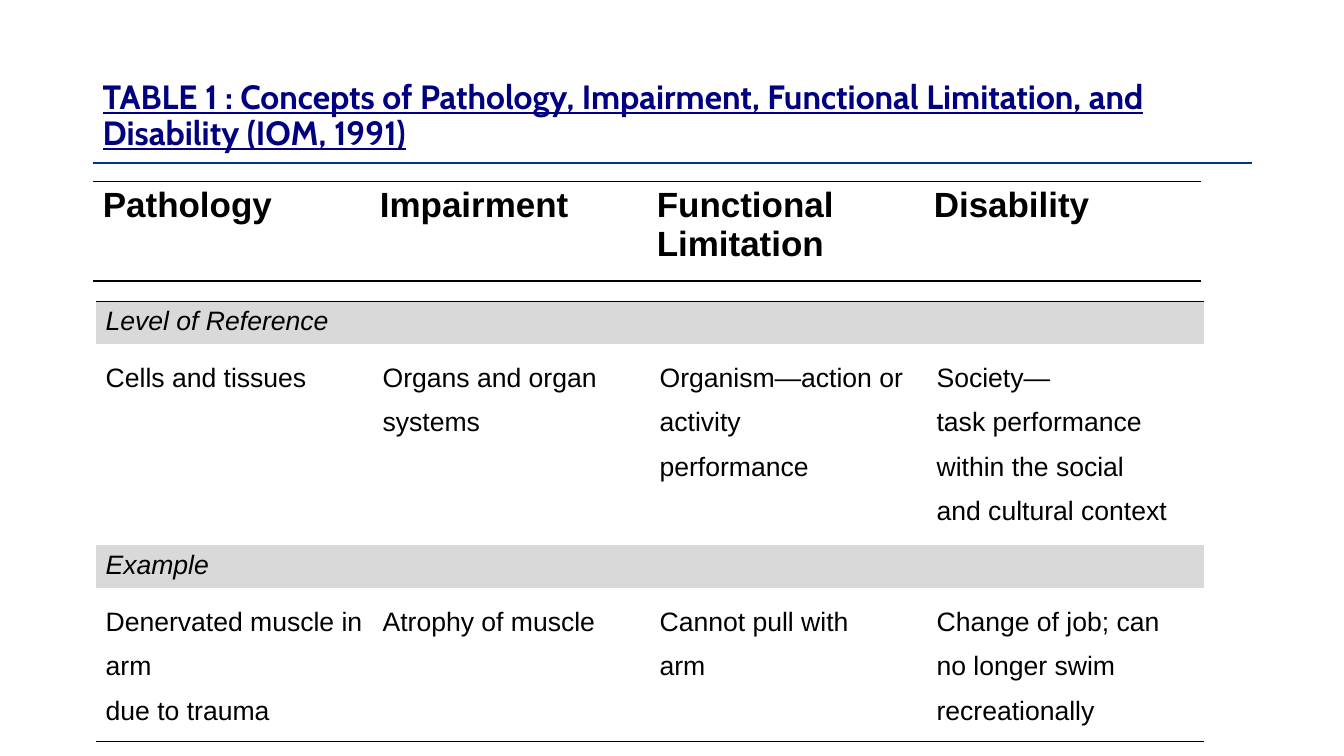
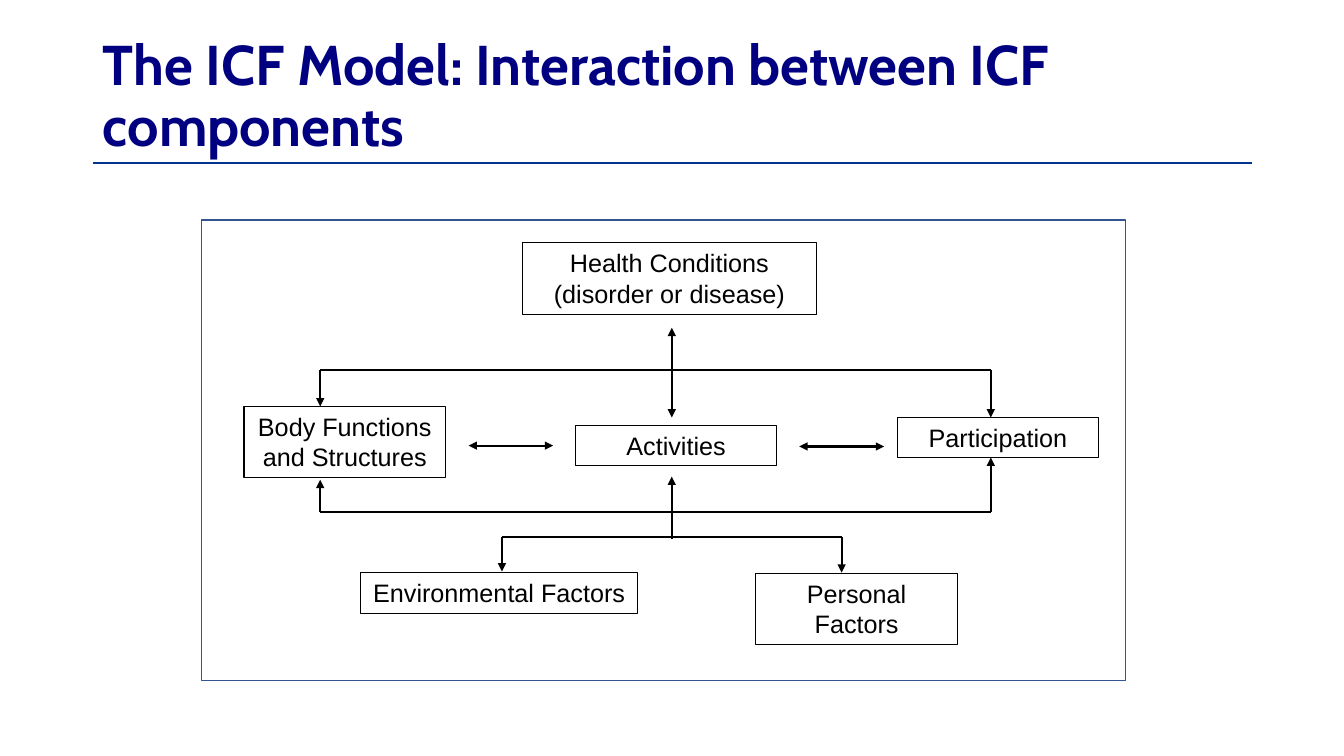
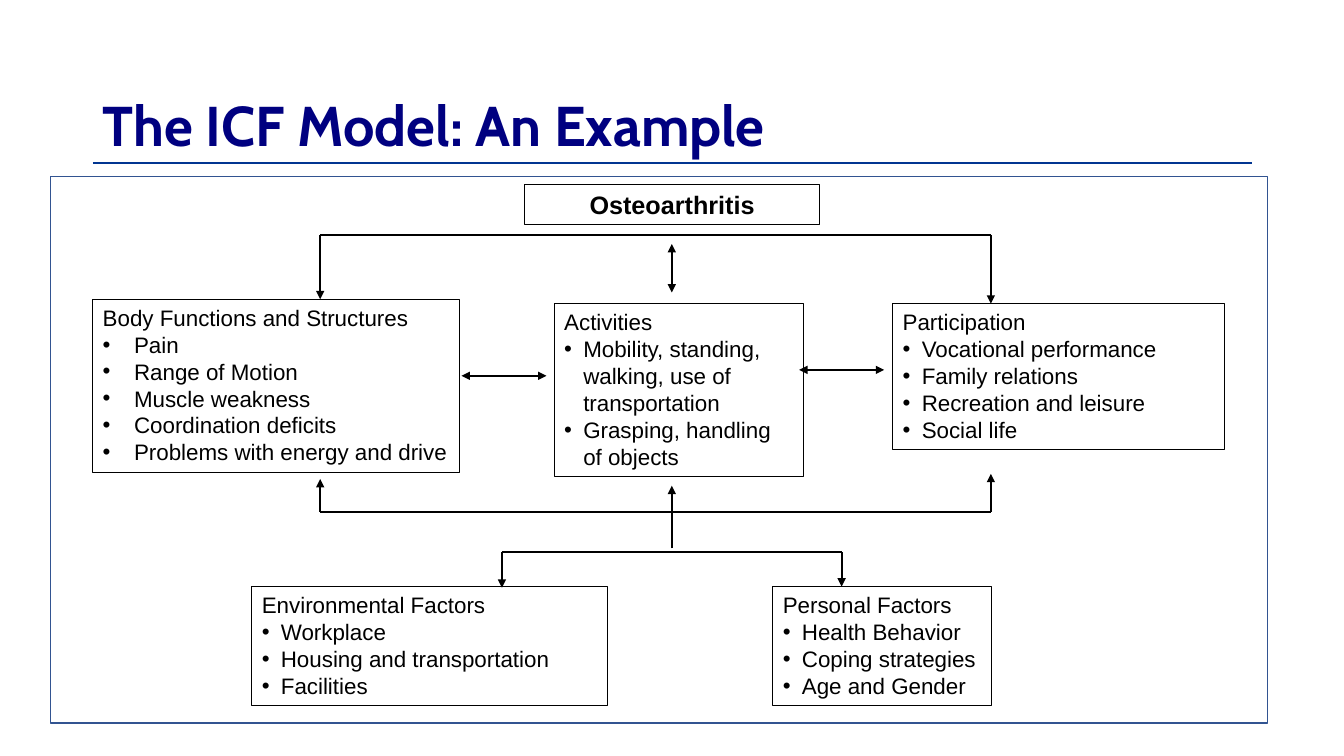
"""Build three slides on disability concepts and the ICF model."""
from lxml import etree
from pptx import Presentation
from pptx.dml.color import RGBColor
from pptx.enum.shapes import MSO_CONNECTOR, MSO_SHAPE
from pptx.enum.text import MSO_ANCHOR, PP_ALIGN
from pptx.oxml.ns import qn
from pptx.util import Cm, Pt

STRAIGHT = MSO_CONNECTOR.STRAIGHT
RECTANGLE = MSO_SHAPE.RECTANGLE
TOP, BOTTOM = MSO_ANCHOR.TOP, MSO_ANCHOR.BOTTOM
LEFT, CENTER = PP_ALIGN.LEFT, PP_ALIGN.CENTER

COLORS = {"title": "000080", "rule": "013591", "frame": "325491",
          "ink": "000000", "band": "D9D9D9"}

STYLES = {
    "title": {"name": "Cabin", "size": Pt(40), "bold": True, "color": "title"},
    "table title": {"name": "Cabin", "size": Pt(24), "bold": True,
                    "underline": True, "color": "title"},
    "header": {"name": "Arial", "size": Pt(25), "bold": True, "color": "ink"},
    "band": {"name": "Arial", "size": Pt(19), "italic": True, "color": "ink"},
    "body": {"name": "Arial", "size": Pt(19), "color": "ink"},
    "box": {"name": "Arial", "size": Pt(18), "color": "ink"},
    "bold box": {"name": "Arial", "size": Pt(18), "bold": True, "color": "ink"},
    "list box": {"name": "Arial", "size": Pt(16), "color": "ink"},
}

TITLE_AREA = (2.34, 0.84, 29.21, 3.27)
TABLE_TITLE_AREA = (2.34, 1.9, 29.21, 2.16)

CONCEPT_TITLE = ("TABLE 1 : Concepts of Pathology, Impairment, Functional "
                 "Limitation, and Disability (IOM, 1991)")
CONCEPT_TABLES = [
    {"at": (2.34, 4.57), "rows": [
        {"height": 2.51, "style": "header", "borders": "TB",
         "cells": ["Pathology", "Impairment", "Functional Limitation", "Disability"]},
    ]},
    {"at": (2.41, 7.59), "rows": [
        {"height": 1.07, "style": "band", "borders": "TB", "fill": "band",
         "cells": ["Level of Reference"]},
        {"height": 4.93, "style": "body", "borders": "", "spacing": 1.5,
         "cells": ["Cells and tissues",
                   "Organs and organ systems",
                   "Organism—action or activity\nperformance",
                   "Society—\ntask performance\nwithin the social\nand cultural context"]},
        {"height": 1.07, "style": "band", "borders": "", "fill": "band",
         "cells": ["Example"]},
        {"height": 3.73, "style": "body", "borders": "B", "spacing": 1.5,
         "cells": ["Denervated muscle in arm\ndue to trauma",
                   "Atrophy of muscle",
                   "Cannot pull with\narm",
                   "Change of job; can no longer swim recreationally"]},
    ]},
]
COLUMN_COUNT, COLUMN_WIDTH = 4, 6.98

BODY_X, ACTIVITY_X, PARTICIPATION_X = 8.07, 16.93, 24.97
ENVIRONMENT_X, PERSONAL_X = 12.65, 21.21

DIAGRAMS = [
    {"title": "The ICF Model: Interaction between ICF components",
     "frame": (5.08, 5.54, 23.29, 11.61),
     "boxes": [
         ("box", (13.16, 6.12, 7.42, 1.8), "Health Conditions (disorder or disease)"),
         ("box", (6.15, 10.24, 5.08, 1.8), "Body Functions and Structures"),
         ("box", (14.5, 10.72, 5.08, 1.02), "Activities"),
         ("box", (9.09, 14.43, 6.98, 1.02), "Environmental Factors"),
         ("box", (22.61, 10.52, 5.08, 1.02), "Participation"),
         ("box", (19.05, 14.45, 5.08, 1.8), "Personal Factors"),
     ],
     "upper": 9.32, "upper tips": (10.24, 10.52),
     "lower": 12.9, "lower tips": (12.09, 11.53),
     "factors": 13.54, "factor tips": (14.4, 14.43),
     "health": (8.26, 10.52), "feeder": (13.59, 12.01),
     "sideways": [(11.81, 13.94, 11.23), (20.14, 22.28, 11.25)]},
    {"title": "The ICF Model: An Example",
     "frame": (1.27, 4.45, 30.68, 13.77),
     "boxes": [
         ("bold box", (13.23, 4.65, 7.42, 1.02), "Osteoarthritis"),
         ("list box", (2.34, 7.54, 9.25, 4.37), "Body Functions and Structures", 0.79,
          ["Pain", "Range of Motion", "Muscle weakness", "Coordination deficits",
           "Problems with energy and drive"]),
         ("list box", (13.97, 7.65, 6.27, 4.37), "Activities", 0.48,
          ["Mobility, standing, walking, use of transportation",
           "Grasping, handling of objects"]),
         ("list box", (22.5, 7.65, 8.36, 3.68), "Participation", 0.48,
          ["Vocational performance", "Family relations", "Recreation and leisure",
           "Social life"]),
         ("list box", (6.35, 14.78, 8.97, 3), "Environmental Factors", 0.48,
          ["Workplace", "Housing and transportation", "Facilities"]),
         ("list box", (19.48, 14.78, 5.51, 3), "Personal Factors", 0.48,
          ["Health Behavior", "Coping strategies", "Age and Gender"]),
     ],
     "upper": 5.92, "upper tips": (7.54, 7.65),
     "lower": 12.9, "lower tips": (12.07, 11.94),
     "factors": 13.92, "factor tips": (14.81, 14.78),
     "health": (6.15, 7.37), "feeder": (13.82, 12.24),
     "sideways": [(11.63, 13.77, 9.47), (20.14, 22.28, 9.32)]},
]


def rgb(name):
    """Return a named colour."""
    return RGBColor.from_string(COLORS[name])


def lengths(values):
    """Turn centimetre numbers into lengths."""
    return [Cm(value) for value in values]


def apply_font(font, style):
    """Set a font from a named style."""
    for key, value in STYLES[style].items():
        if key == "color":
            font.color.rgb = rgb(value)
        else:
            setattr(font, key, value)


def add_line(slide, start, end, arrows=(), color="ink", width=1.5):
    """Add a straight line with optional arrowheads."""
    line = slide.shapes.add_connector(STRAIGHT, *lengths(start + end))
    line.line.color.rgb = rgb(color)
    line.line.width = Pt(width)
    outline = line.line._get_or_add_ln()
    for arrow in arrows:
        etree.SubElement(outline, qn(f"a:{arrow}"), type="triangle")
    etree.SubElement(line._element.spPr, qn("a:effectLst"))


def add_titled_slide(presentation, title, style="title", area=TITLE_AREA, anchor=BOTTOM):
    """Add a slide with the shared rule and title."""
    slide = presentation.slides.add_slide(presentation.slide_layouts[6])
    add_line(slide, (2.34, 4.11), (31.55, 4.11), color="rule", width=1)
    frame = slide.shapes.add_textbox(*lengths(area)).text_frame
    frame.word_wrap = True
    frame.vertical_anchor = anchor
    paragraph = frame.paragraphs[0]
    paragraph.text = title
    paragraph.line_spacing = 0.9
    apply_font(paragraph.font, style)
    return slide


def set_borders(cell, sides):
    """Draw the named sides of a cell and clear the others."""
    properties = cell._tc.get_or_add_tcPr()
    for side in "LRTB":
        border = etree.SubElement(properties, qn(f"a:ln{side}"), w=str(Pt(1)))
        if side in sides:
            fill = etree.SubElement(border, qn("a:solidFill"))
            etree.SubElement(fill, qn("a:srgbClr"), val=COLORS["ink"])
        else:
            etree.SubElement(border, qn("a:noFill"))


def fill_cell(cell, text, row):
    """Format one cell and write its text."""
    set_borders(cell, row["borders"])
    if "fill" in row:
        cell.fill.solid()
        cell.fill.fore_color.rgb = rgb(row["fill"])
    else:
        cell.fill.background()
    cell.text = text
    for paragraph in cell.text_frame.paragraphs:
        paragraph.line_spacing = row.get("spacing", 1.0)
        apply_font(paragraph.font, row["style"])


def add_concept_table(slide, at, rows):
    """Add a table of four equal columns."""
    size = (COLUMN_COUNT * COLUMN_WIDTH, sum(row["height"] for row in rows))
    table = slide.shapes.add_table(len(rows), COLUMN_COUNT, *lengths(at + size)).table
    table.first_row = table.horz_banding = False
    for column in table.columns:
        column.width = Cm(COLUMN_WIDTH)
    for row_index, row in enumerate(rows):
        table.rows[row_index].height = Cm(row["height"])
        for column_index in range(COLUMN_COUNT):
            text = "".join(row["cells"][column_index:column_index + 1])
            fill_cell(table.cell(row_index, column_index), text, row)


def add_rectangle(slide, area, color, width):
    """Add an unfilled rectangle."""
    shape = slide.shapes.add_shape(RECTANGLE, *lengths(area))
    shape.shadow.inherit = False
    shape.fill.background()
    shape.line.color.rgb = rgb(color)
    shape.line.width = Pt(width)
    return shape


def add_bullet(paragraph, indent):
    """Give a paragraph a hanging bullet."""
    properties = paragraph._p.get_or_add_pPr()
    properties.set("marL", str(Cm(indent)))
    properties.set("indent", str(-Cm(indent)))
    etree.SubElement(properties, qn("a:buFont"), typeface="Arial")
    etree.SubElement(properties, qn("a:buChar"), char="•")


def add_box(slide, style, area, heading, indent=0, items=()):
    """Add an outlined box with a heading and optional bullets."""
    frame = add_rectangle(slide, area, "ink", 0.75).text_frame
    frame.word_wrap = True
    frame.vertical_anchor = TOP
    frame.text = "\n".join([heading, *items])
    for index, paragraph in enumerate(frame.paragraphs):
        paragraph.alignment = LEFT if items else CENTER
        if index:
            add_bullet(paragraph, indent)
        apply_font(paragraph.font, style)


def add_diagram(slide, diagram):
    """Add the framed boxes and the lines between them."""
    add_rectangle(slide, diagram["frame"], "frame", 1)
    for box in diagram["boxes"]:
        add_box(slide, *box)
    one_way, two_way = ("tailEnd",), ("headEnd", "tailEnd")
    outer, factors = (BODY_X, PARTICIPATION_X), (ENVIRONMENT_X, PERSONAL_X)
    for bus, tips, ends in (("factors", "factor tips", factors),
                            ("lower", "lower tips", outer),
                            ("upper", "upper tips", outer)):
        y = diagram[bus]
        add_line(slide, (ends[0], y), (ends[1], y))
        for x, tip in zip(ends, diagram[tips]):
            add_line(slide, (x, y), (x, tip), one_way)
    for key, arrows in (("health", two_way), ("feeder", one_way)):
        start, end = diagram[key]
        add_line(slide, (ACTIVITY_X, start), (ACTIVITY_X, end), arrows)
    for start, end, y in diagram["sideways"]:
        add_line(slide, (start, y), (end, y), two_way)


def main():
    """Build and save the presentation."""
    presentation = Presentation()
    presentation.slide_width, presentation.slide_height = Cm(33.87), Cm(19.05)
    slide = add_titled_slide(presentation, CONCEPT_TITLE, "table title",
                             TABLE_TITLE_AREA, TOP)
    for table in CONCEPT_TABLES:
        add_concept_table(slide, **table)
    for diagram in DIAGRAMS:
        add_diagram(add_titled_slide(presentation, diagram["title"]), diagram)
    presentation.save("out.pptx")


if __name__ == "__main__":
    main()
